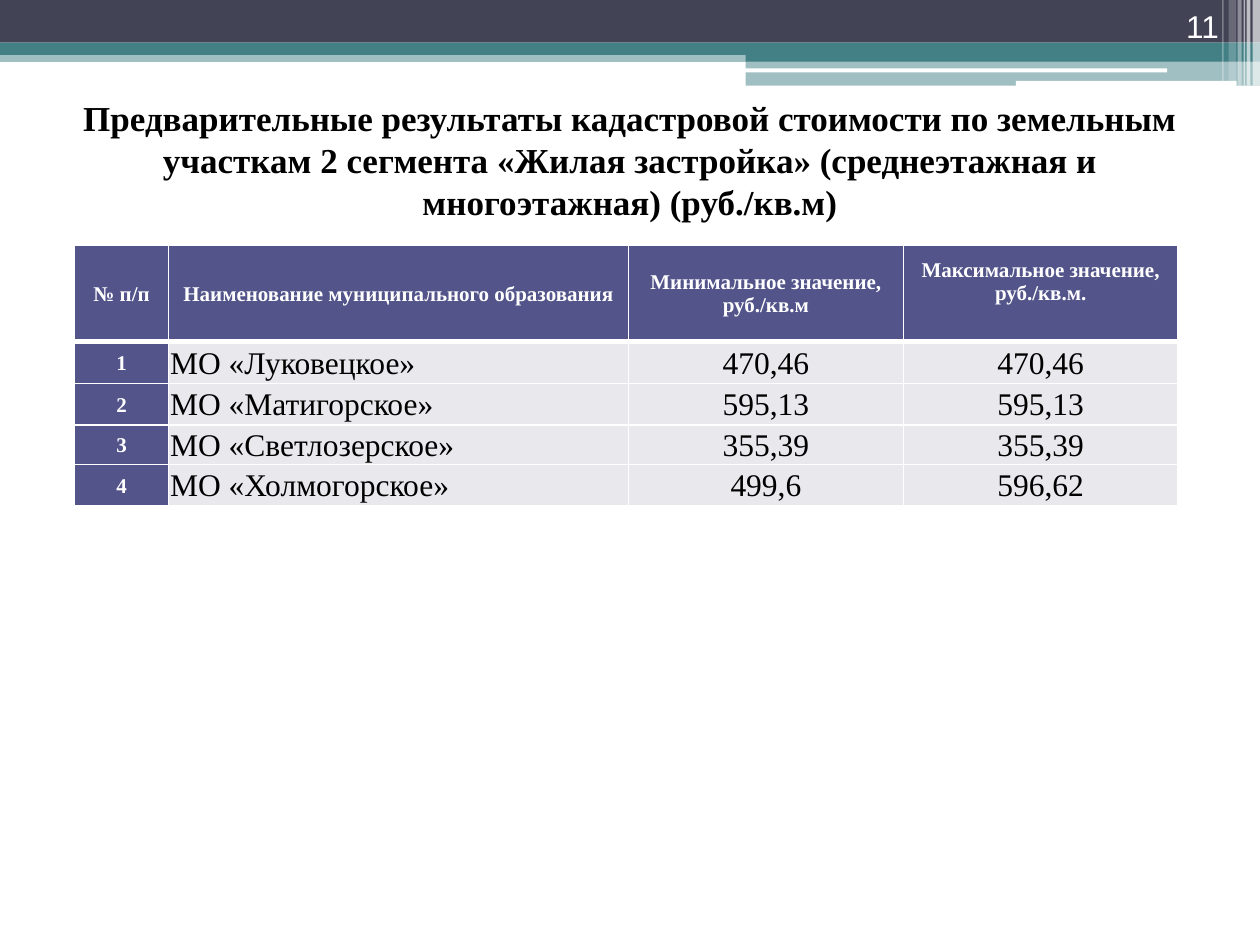
from typing import NamedTuple

from pptx import Presentation
from pptx.dml.color import RGBColor
from pptx.enum.shapes import MSO_SHAPE
from pptx.enum.text import MSO_ANCHOR, PP_ALIGN
from pptx.oxml.ns import qn
from pptx.util import Cm, Pt
from lxml.etree import SubElement

WHITE = RGBColor(0xFF, 0xFF, 0xFF)
BLACK = RGBColor(0x00, 0x00, 0x00)
SLATE = RGBColor(0x42, 0x44, 0x56)
TEAL = RGBColor(0x43, 0x80, 0x86)
INDIGO = RGBColor(0x53, 0x54, 0x8A)
PALE_GREY = RGBColor(0xE9, 0xE9, 0xED)
SERIF = "Times New Roman"
SANS = "Arial"


class Band(NamedTuple):
    left: float
    top: float
    width: float
    height: float
    color: RGBColor = WHITE
    opacity: int = 100
    kind: MSO_SHAPE = MSO_SHAPE.RECTANGLE


class TextStyle(NamedTuple):
    size: int
    color: RGBColor
    font: str = SERIF
    bold: bool = False
    align: PP_ALIGN = PP_ALIGN.CENTER


HEADER_BANDS = [
    Band(0, 1.02, 25.4, 0.23, TEAL, 50),
    Band(0, 0, 25.4, 0.86, SLATE),
    Band(0, 0.86, 25.4, 0.25, TEAL),
    Band(15.03, 0.99, 10.37, 0.25, TEAL),
    Band(15.03, 1.23, 10.37, 0.5, TEAL, 50),
    Band(15.02, 1.38, 8.51, 0.08, kind=MSO_SHAPE.ROUNDED_RECTANGLE),
    Band(20.48, 1.63, 4.45, 0.1, kind=MSO_SHAPE.ROUNDED_RECTANGLE),
    Band(25.25, 0, 0.15, 1.73, opacity=65),
    Band(25.13, 0, 0.08, 1.73, opacity=65),
    Band(25.07, 0, 0.03, 1.73, opacity=60),
    Band(24.95, 0, 0.08, 1.73, opacity=40),
    Band(24.77, 0, 0.15, 1.63, opacity=20),
    Band(24.64, 0, 0.03, 1.63, opacity=30),
]

TITLE = ("Предварительные результаты кадастровой стоимости по земельным участкам "
         "2 сегмента «Жилая застройка» (среднеэтажная и многоэтажная) (руб./кв.м)")
TABLE_ROWS = [
    ("№ п/п", "Наименование муниципального образования",
     "Минимальное значение, руб./кв.м", "Максимальное значение, руб./кв.м."),
    ("1", "МО «Луковецкое»", "470,46", "470,46"),
    ("2", "МО «Матигорское»", "595,13", "595,13"),
    ("3", "МО «Светлозерское»", "355,39", "355,39"),
    ("4", "МО «Холмогорское»", "499,6", "596,62"),
]
COLUMN_WIDTHS = [1.9, 9.27, 5.54, 5.54]
ROW_HEIGHTS = [1.95, 0.84, 0.84, 0.77, 0.84]

HEADING = TextStyle(12, WHITE, bold=True)
VALUE = TextStyle(18, BLACK)
NAME = TextStyle(18, BLACK, align=PP_ALIGN.LEFT)


def add_band(slide, band: Band) -> None:
    shape = slide.shapes.add_shape(band.kind, Cm(band.left), Cm(band.top),
                                   Cm(band.width), Cm(band.height))
    shape.shadow.inherit = False
    shape.line.fill.background()
    shape.fill.solid()
    shape.fill.fore_color.rgb = band.color
    if band.opacity < 100:
        color = shape.fill._xPr.find(".//" + qn("a:srgbClr"))
        SubElement(color, qn("a:alpha"), val=str(band.opacity * 1000))


def write_text(text_frame, text: str, style: TextStyle) -> None:
    paragraph = text_frame.paragraphs[0]
    paragraph.alignment = style.align
    run = paragraph.add_run()
    run.text = text
    run.font.name = style.font
    run.font.size = Pt(style.size)
    run.font.bold = style.bold
    run.font.color.rgb = style.color


def add_text_box(slide, left: float, top: float, width: float, height: float,
                 text: str, style: TextStyle, anchor: MSO_ANCHOR) -> None:
    box = slide.shapes.add_textbox(Cm(left), Cm(top), Cm(width), Cm(height))
    box.text_frame.word_wrap = True
    box.text_frame.vertical_anchor = anchor
    write_text(box.text_frame, text, style)


def set_borders(cell, bottom_width: int, top_width: int) -> None:
    """Draw white borders; the line elements must precede the cell fill."""
    properties = cell._tc.get_or_add_tcPr()
    widths = {"a:lnL": 1, "a:lnR": 1, "a:lnT": top_width, "a:lnB": bottom_width}
    for position, (tag, width) in enumerate(widths.items()):
        line = SubElement(properties, qn(tag), w=str(Pt(width)))
        fill = SubElement(line, qn("a:solidFill"))
        SubElement(fill, qn("a:srgbClr"), val=str(WHITE))
        properties.insert(position, line)


def add_value_table(slide) -> None:
    frame = slide.shapes.add_table(len(TABLE_ROWS), len(COLUMN_WIDTHS), Cm(1.5), Cm(4.94),
                                   Cm(sum(COLUMN_WIDTHS)), Cm(sum(ROW_HEIGHTS)))
    table = frame.table
    for column, width in zip(table.columns, COLUMN_WIDTHS):
        column.width = Cm(width)
    for row, height in zip(table.rows, ROW_HEIGHTS):
        row.height = Cm(height)
    for row_index, texts in enumerate(TABLE_ROWS):
        for column_index, text in enumerate(texts):
            cell = table.cell(row_index, column_index)
            is_heading = row_index == 0 or column_index == 0
            style = HEADING if is_heading else NAME if column_index == 1 else VALUE
            cell.vertical_anchor = MSO_ANCHOR.MIDDLE
            cell.margin_left = cell.margin_right = cell.margin_top = Cm(0.03)
            cell.margin_bottom = 0
            cell.fill.solid()
            cell.fill.fore_color.rgb = INDIGO if is_heading else PALE_GREY
            set_borders(cell, bottom_width=3 if row_index == 0 else 1,
                        top_width=3 if row_index == 1 else 1)
            write_text(cell.text_frame, text, style)
    # The last heading sits half a line higher than its neighbours.
    table.cell(0, len(COLUMN_WIDTHS) - 1).margin_bottom = Cm(0.48)


def main() -> None:
    presentation = Presentation()
    presentation.slide_width = Cm(25.4)
    presentation.slide_height = Cm(19.05)
    slide = presentation.slides.add_slide(presentation.slide_layouts[6])
    for band in HEADER_BANDS:
        add_band(slide, band)
    add_text_box(slide, 1.27, 1.73, 22.86, 2.97, TITLE,
                 TextStyle(20, BLACK, bold=True), MSO_ANCHOR.MIDDLE)
    add_text_box(slide, 22.71, 0, 2.11, 1.02, "11",
                 TextStyle(18, WHITE, SANS, align=PP_ALIGN.RIGHT), MSO_ANCHOR.BOTTOM)
    add_value_table(slide)
    presentation.save("out.pptx")


if __name__ == "__main__":
    main()
